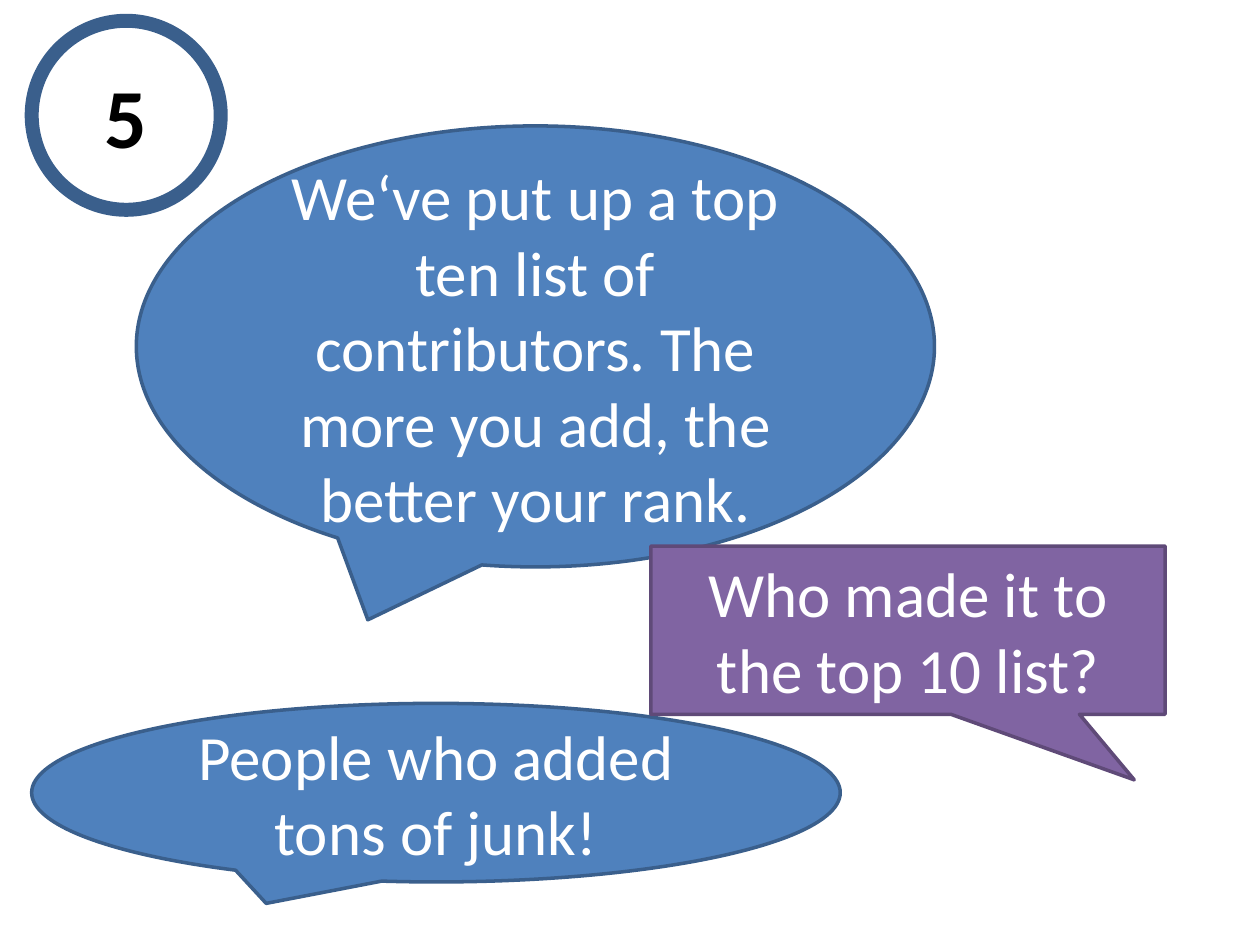
import pptx
import pptx.dml.color
import pptx.enum.shapes
import pptx.enum.text
import pptx.util

Cm, Pt = pptx.util.Cm, pptx.util.Pt
RGBColor = pptx.dml.color.RGBColor
MSO_SHAPE = pptx.enum.shapes.MSO_SHAPE

BLUE = RGBColor(0x4F, 0x81, 0xBD)
DARK_BLUE = RGBColor(0x3A, 0x5F, 0x8C)
PURPLE = RGBColor(0x80, 0x64, 0xA2)
DARK_PURPLE = RGBColor(0x5F, 0x4A, 0x78)
WHITE = RGBColor(0xFF, 0xFF, 0xFF)
BLACK = RGBColor(0, 0, 0)


def add_labelled_shape(slide, kind, box, text, fill, line, width, color, font):
    """Add a shape with centred text; box is left, top, width, height in cm."""
    sp = slide.shapes.add_shape(kind, *(Cm(v) for v in box))
    sp.shadow.inherit = False
    if fill is None:
        sp.fill.background()
    else:
        sp.fill.solid()
        sp.fill.fore_color.rgb = fill
    sp.line.color.rgb = line
    sp.line.width = Pt(width)

    tf = sp.text_frame
    tf.word_wrap = True
    tf.vertical_anchor = pptx.enum.text.MSO_ANCHOR.MIDDLE
    p = tf.paragraphs[0]
    p.alignment = pptx.enum.text.PP_ALIGN.CENTER
    r = p.add_run()
    r.text = text
    for name, value in font.items():
        setattr(r.font, name, value)
    r.font.color.rgb = color
    return sp


def add_speech(slide, kind, box, text, fill, line, tail):
    """Add a speech bubble; tail is the tip's offset from the centre, in box sizes."""
    sp = add_labelled_shape(slide, kind, box, text, fill, line, 2, WHITE,
                            {"name": "Calibri", "size": Pt(36)})
    for i, value in enumerate(tail):
        sp.adjustments[i] = value


def add_statement(slide, box, text):
    add_speech(slide, MSO_SHAPE.OVAL_CALLOUT, box, text, BLUE, DARK_BLUE,
               (-0.21, 0.62))


def add_question(slide, box, text):
    add_speech(slide, MSO_SHAPE.RECTANGULAR_CALLOUT, box, text, PURPLE,
               DARK_PURPLE, (0.44, 0.89))


def add_number_badge(slide, box, text):
    add_labelled_shape(slide, MSO_SHAPE.OVAL, box, text, None, DARK_BLUE, 8,
                       BLACK, {"name": "Calibri", "size": Pt(48), "bold": True})


def main():
    prs = pptx.Presentation()
    prs.slide_width, prs.slide_height = Cm(25.4), Cm(19.05)
    s = prs.slides.add_slide(prs.slide_layouts[6])
    add_statement(s, (2.75, 2.54, 16.09, 8.89),
                  "We‘ve put up a top ten list of contributors. "
                  "The more you add, the better your rank.")
    add_statement(s, (0.64, 14.18, 16.3, 3.6), "People who added tons of junk!")
    add_question(s, (13.12, 11.01, 10.37, 3.39), "Who made it to the top 10 list?")
    add_number_badge(s, (0.64, 0.42, 3.81, 3.81), "5")
    prs.save("out.pptx")


if __name__ == "__main__":
    main()
